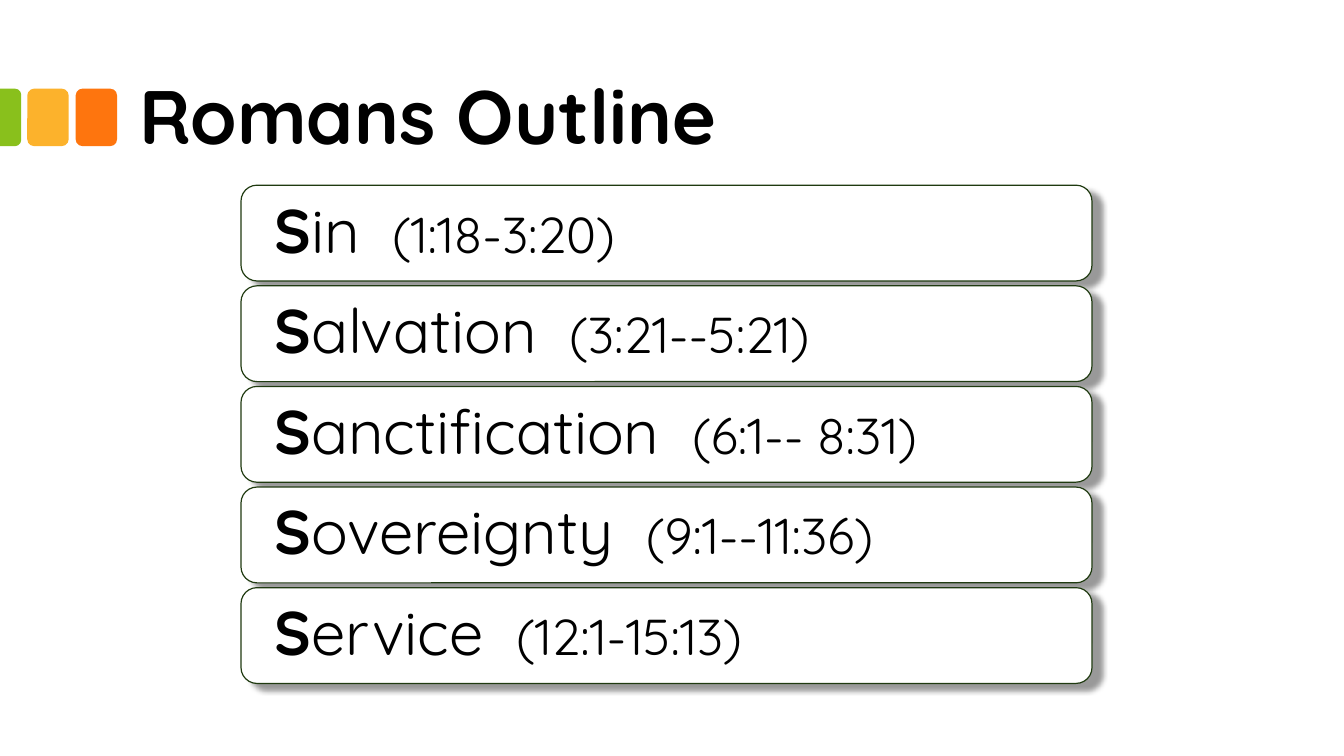
from dataclasses import dataclass

from lxml.etree import SubElement as Sub
from pptx import Presentation
from pptx.dml.color import RGBColor as Rgb
from pptx.enum.shapes import MSO_SHAPE as Kind
from pptx.enum.text import MSO_ANCHOR as Anchor, MSO_AUTO_SIZE as Fit, PP_ALIGN as Align
from pptx.oxml.ns import qn
from pptx.util import Inches, Pt


@dataclass(frozen=True)
class Theme:
    font: str = "Quicksand"
    ink: str = "000000"
    paper: str = "FFFFFF"
    edge: str = "1F3A10"
    green: str = "89C01C"
    gold: str = "FCB22C"
    orange: str = "FE750E"
    head: int = 54
    word: int = 44
    verse: int = 36


@dataclass(frozen=True)
class Box:
    """A frame in percent of the slide's width and height."""
    left: float
    top: float
    wide: float
    high: float

    def frame(self) -> tuple[int, int, int, int]:
        return across(self.left), down(self.top), across(self.wide), down(self.high)


@dataclass(frozen=True)
class Tile:
    kind: Kind
    box: Box
    fill: str
    turn: int = 0


@dataclass(frozen=True)
class Part:
    first: str
    rest: str
    verse: str


THEME = Theme()
WIDE, HIGH = Inches(13.33), Inches(7.5)
TITLE = Box(9.38, 3.33, 79.97, 18.93)
TILES = [
    Tile(Kind.ROUNDED_RECTANGLE, Box(5.63, 11.73, 3.08, 7.6), THEME.orange),
    Tile(Kind.ROUNDED_RECTANGLE, Box(2.03, 11.73, 3.08, 7.6), THEME.gold),
    Tile(Kind.ROUND_2_SAME_RECTANGLE, Box(-1.35, 14.13, 4.28, 2.8), THEME.green, 90),
]
PARTS = [
    Part("S", "in", "(1:18-3:20)"),
    Part("S", "alvation", "(3:21--5:21)"),
    Part("S", "anctification", "(6:1-- 8:31)"),
    Part("S", "overeignty", "(9:1--11:36)"),
    Part("S", "ervice", "(12:1-15:13)"),
]
TOP, STEP = 24.5, 13.31


def across(share: float) -> int:
    return round(WIDE * share / 100)


def down(share: float) -> int:
    return round(HIGH * share / 100)


def add_run(para, text: str, size: int, bold: bool = False):
    run = para.add_run()
    run.text = text
    font = run.font
    font.name, font.size, font.bold = THEME.font, Pt(size), bold
    font.color.rgb = Rgb.from_string(THEME.ink)
    return run


def set_frame(frame, anchor: Anchor, side: float, edge: float) -> None:
    frame.word_wrap, frame.auto_size = True, Fit.NONE
    frame.vertical_anchor = anchor
    frame.margin_left = frame.margin_right = across(side)
    frame.margin_top = frame.margin_bottom = down(edge)


def add_block(slide, kind: Kind, box: Box, fill: str):
    block = slide.shapes.add_shape(kind, *box.frame())
    block.shadow.inherit = False
    block.fill.solid()
    block.fill.fore_color.rgb = Rgb.from_string(fill)
    block.line.fill.background()
    return block


def add_tile(slide, tile: Tile) -> None:
    block = add_block(slide, tile.kind, tile.box, tile.fill)
    block.rotation = tile.turn
    if tile.turn:
        block.adjustments[0] = 0.29


def add_shade(block) -> None:
    effect = block._element.spPr.find(qn("a:effectLst"))
    shade = Sub(effect, qn("a:outerShdw"), blurRad=str(Pt(4)), dist=str(Pt(8)),
                dir=str(30 * 60000), algn="tl", rotWithShape="0")
    tint = Sub(shade, qn("a:srgbClr"), val=THEME.ink)
    Sub(tint, qn("a:alpha"), val="40000")


def add_card(slide, part: Part, row: int) -> None:
    top = TOP + row * STEP
    # Framed card
    card = add_block(slide, Kind.ROUNDED_RECTANGLE, Box(17.93, top, 63.32, 12.67), THEME.paper)
    card.line.color.rgb = Rgb.from_string(THEME.edge)
    card.line.width = Pt(0.85)
    add_shade(card)
    # Label: bold initial, word, verses
    label = slide.shapes.add_textbox(*Box(18.3, top + 0.6, 62.57, 11.47).frame())
    frame = label.text_frame
    set_frame(frame, Anchor.MIDDLE, 1.35, 1.2)
    frame.margin_left = across(2.1)
    para = frame.paragraphs[0]
    para.line_spacing = 0.9
    add_run(para, part.first, THEME.word, True)
    add_run(para, part.rest, THEME.word)
    gap = add_run(para, " ", THEME.word)
    gap._r.get_or_add_rPr().set("spc", "1100")
    add_run(para, part.verse, THEME.verse)


def add_title(slide, text: str) -> None:
    title = slide.shapes.title
    title.left, title.top, title.width, title.height = TITLE.frame()
    set_frame(title.text_frame, Anchor.BOTTOM, 0.98, 0.93)
    para = title.text_frame.paragraphs[0]
    para.alignment = Align.LEFT
    para.line_spacing = 0.9
    add_run(para, text, THEME.head, True)


def main() -> None:
    deck = Presentation()
    deck.slide_width, deck.slide_height = WIDE, HIGH
    slide = deck.slides.add_slide(deck.slide_layouts[5])
    slide.background.fill.solid()
    slide.background.fill.fore_color.rgb = Rgb.from_string(THEME.paper)

    # Heading with its color tiles
    for tile in TILES:
        add_tile(slide, tile)
    add_title(slide, "Romans Outline")

    # Outline cards
    for row, part in enumerate(PARTS):
        add_card(slide, part, row)
    deck.save("out.pptx")


if __name__ == "__main__":
    main()
